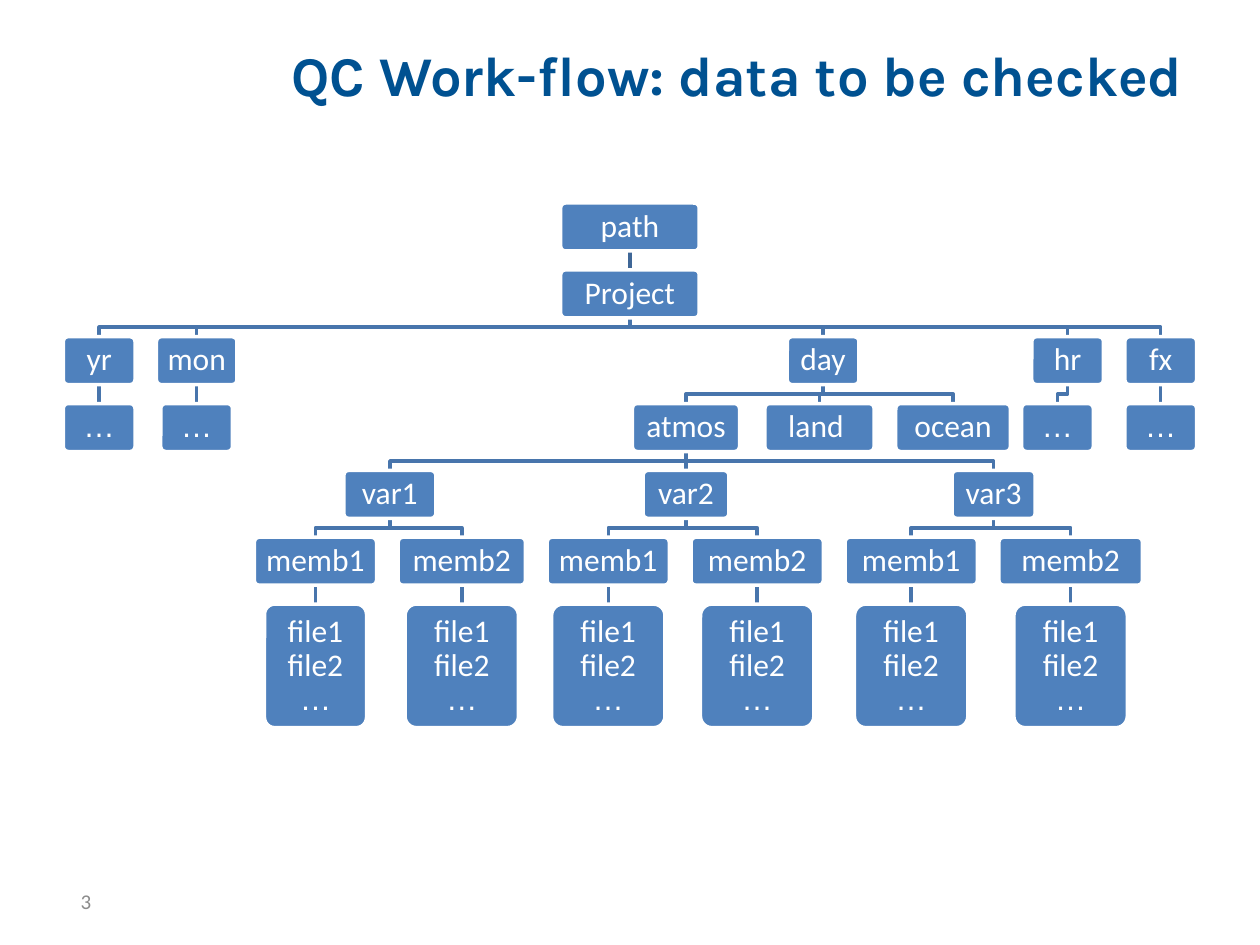
import dataclasses

import pptx
import pptx.dml.color
import pptx.enum.shapes
import pptx.enum.text
import pptx.util
from lxml import etree

Pt = pptx.util.Pt
ALIGN = pptx.enum.text.PP_ALIGN


@dataclasses.dataclass(frozen=True)
class Theme:
    box: str = "4F81BD"
    white: str = "FFFFFF"
    root_link: str = "3F6797"
    link: str = "4875AC"
    title: str = "005191"
    number: str = "8C8C8C"
    body_font: str = "Calibri"
    symbol_font: str = "Arial"
    title_font: str = "Karla"
    body_size: int = 18
    title_size: int = 32
    number_size: int = 12
    line_width: int = 2


@dataclasses.dataclass
class Node:
    text: str
    center: float
    width: float
    children: list = dataclasses.field(default_factory=list)
    height: float = 27.4


TREE_TOP = 116
LEVEL_STEP = 38.2
SMALL = 41
DOTS = "…"


def dots(center):
    return [Node(DOTS, center, SMALL)]


def member(name, center, width, file_width=64.8):
    files = Node("file1\nfile2\n" + DOTS, center, file_width, height=70.6)
    return Node(name, center, width, [files])


def build_tree():
    variables = [
        Node("var1", 222.8, 52.6, [member("memb1", 180.3, 69.8, 58.3),
                                   member("memb2", 263.9, 72.7)]),
        Node("var2", 392, 49, [member("memb1", 347.6, 69.8),
                               member("memb2", 432.7, 75.6)]),
        Node("var3", 567.8, 47.5, [member("memb1", 520.7, 75.6),
                                   member("memb2", 611.8, 82)]),
    ]
    realms = [
        Node("atmos", 392, 61.2, variables),
        Node("land ", 468.3, 62.4),
        Node("ocean", 544.6, 65.5),
    ]
    frequencies = [
        Node("yr", 56.7, SMALL, dots(56.7)),
        Node("mon", 112.4, 46, dots(112.4)),
        Node("day", 470.4, SMALL, realms),
        Node("hr", 610.1, SMALL, dots(604.3)),
        Node("fx", 663.3, SMALL, dots(663.3)),
    ]
    return Node("path", 360, 79.2, [Node("Project", 360, 79.2, frequencies)])


class SlideBuilder:
    def __init__(self, slide, theme):
        self.slide = slide
        self.theme = theme

    def color(self, value):
        return pptx.dml.color.RGBColor.from_string(value)

    def style_line(self, line, color):
        line.color.rgb = self.color(color)
        line.width = Pt(self.theme.line_width)

    def style_font(self, font, name, size, color):
        font.name = name
        font.size = Pt(size)
        font.color.rgb = self.color(color)

    def text(self, text, left, top, width, height, name, size, color,
             align=ALIGN.LEFT, bold=False):
        shape = self.slide.shapes.add_textbox(Pt(left), Pt(top), Pt(width), Pt(height))
        frame = shape.text_frame
        frame.word_wrap = True
        frame.vertical_anchor = pptx.enum.text.MSO_ANCHOR.MIDDLE
        paragraph = frame.paragraphs[0]
        paragraph.text = text
        paragraph.alignment = align
        self.style_font(paragraph.font, name, size, color)
        paragraph.font.bold = bold

    def box(self, node, top):
        theme = self.theme
        shape = self.slide.shapes.add_shape(
            pptx.enum.shapes.MSO_SHAPE.ROUNDED_RECTANGLE,
            Pt(node.center - node.width / 2), Pt(top), Pt(node.width), Pt(node.height))
        shape.adjustments[0] = 0.1
        shape.shadow.inherit = False
        shape.fill.solid()
        shape.fill.fore_color.rgb = self.color(theme.box)
        self.style_line(shape.line, theme.white)

        frame = shape.text_frame
        frame.word_wrap = True
        frame.vertical_anchor = pptx.enum.text.MSO_ANCHOR.MIDDLE
        frame.margin_left = frame.margin_right = Pt(5)
        frame.margin_top = frame.margin_bottom = Pt(5)
        paragraph = frame.paragraphs[0]
        paragraph.alignment = ALIGN.CENTER
        paragraph.line_spacing = 0.9
        self.style_font(paragraph.font, theme.body_font, theme.body_size, theme.white)
        for index, line in enumerate(node.text.split("\n")):
            if index:
                paragraph.add_line_break()
            run = paragraph.add_run()
            run.text = line
            if line == DOTS:
                run.font.name = theme.symbol_font
        return shape

    def link(self, parent, child, start, end, color):
        """Join bottom to top, straight or with a bend halfway, behind the boxes."""
        shapes = self.slide.shapes
        (start_x, start_y), (end_x, end_y) = start, end
        if start_x == end_x:
            link = shapes.add_connector(
                pptx.enum.shapes.MSO_CONNECTOR.STRAIGHT,
                Pt(start_x), Pt(start_y), Pt(end_x), Pt(end_y))
            link.begin_connect(parent, 2)
            link.end_connect(child, 0)
            etree.SubElement(link._element.spPr, pptx.oxml.ns.qn("a:effectLst"))
        else:
            middle = (start_y + end_y) / 2
            builder = shapes.build_freeform(Pt(start_x), Pt(start_y))
            builder.add_line_segments(
                [(Pt(x), Pt(y)) for x, y in ((start_x, middle), (end_x, middle), end)],
                close=False)
            link = builder.convert_to_shape()
            link.fill.background()
            link.shadow.inherit = False
        self.style_line(link.line, color)
        shapes._spTree.insert(2, link._element)

    def tree(self, node, level=0):
        top = TREE_TOP + level * LEVEL_STEP
        shape = self.box(node, top)
        color = self.theme.link if level else self.theme.root_link
        for child in node.children:
            child_shape = self.tree(child, level + 1)
            self.link(shape, child_shape, (node.center, top + node.height),
                      (child.center, top + LEVEL_STEP), color)
        return shape


def main():
    presentation = pptx.Presentation()
    presentation.slide_width = Pt(720)
    presentation.slide_height = Pt(540)
    slide = presentation.slides.add_slide(presentation.slide_layouts[6])
    theme = Theme()
    builder = SlideBuilder(slide, theme)
    builder.tree(build_tree())
    builder.text("QC Work-flow: data to be checked", 35.3, 26, 648, 33,
                 theme.title_font, theme.title_size, theme.title, ALIGN.RIGHT, True)
    builder.text("3", 39, 500.5, 168, 28.8,
                 theme.body_font, theme.number_size, theme.number)
    presentation.save("out.pptx")


if __name__ == "__main__":
    main()
